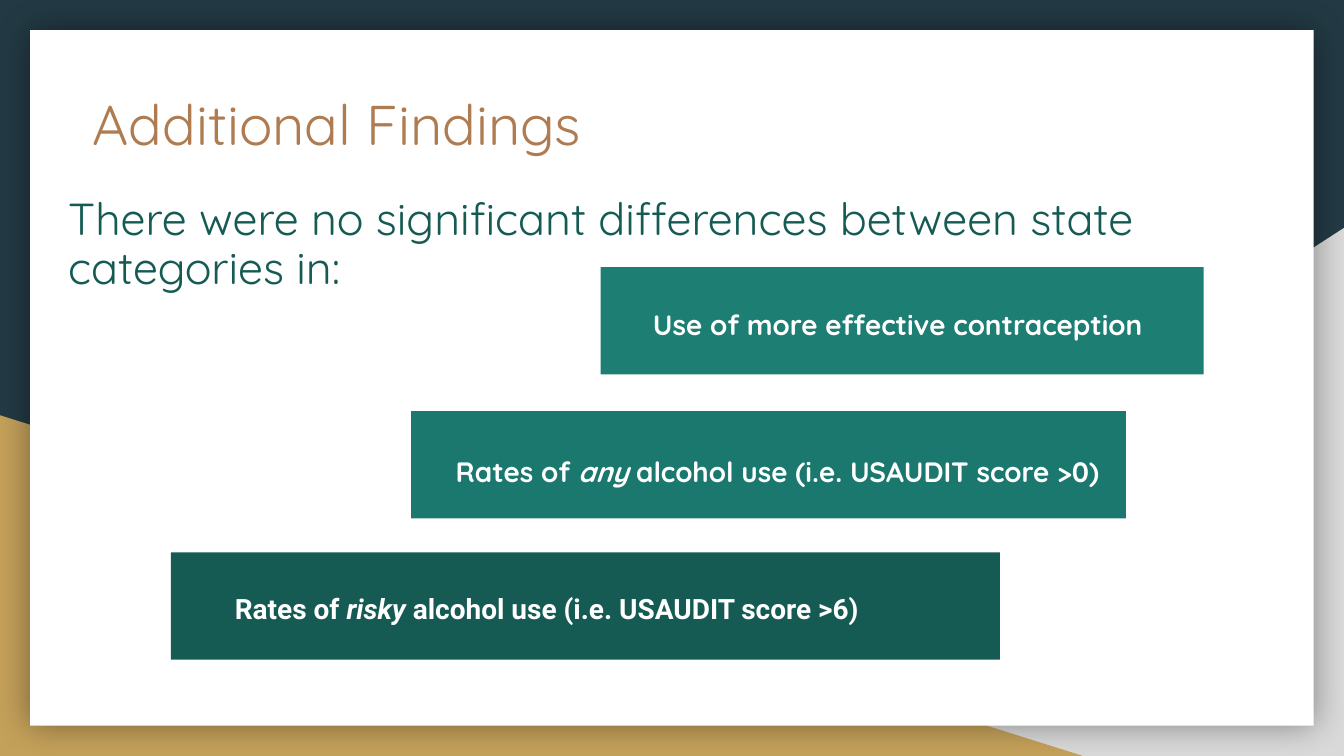
"""Build the Additional Findings slide with three stepped finding bars."""
from lxml import etree
from pptx import Presentation
from pptx.dml.color import RGBColor
from pptx.enum.shapes import MSO_SHAPE
from pptx.enum.text import MSO_ANCHOR
from pptx.oxml import parse_xml
from pptx.util import Cm, Pt

RECTANGLE, TRIANGLE = MSO_SHAPE.RECTANGLE, MSO_SHAPE.RIGHT_TRIANGLE
TOP, MIDDLE = MSO_ANCHOR.TOP, MSO_ANCHOR.MIDDLE
DRAWING = "http://schemas.openxmlformats.org/drawingml/2006/main"
WIDTH, HEIGHT = 25.4, 14.29
BAR_HEIGHT = 2.03

COLORS = {
    "night": "233A44", "gray": "D9D9D9", "gold": "C4A15A", "white": "FFFFFF",
    "copper": "AF7B51", "deep": "155B54", "teal": "1B786E", "light": "1D7E74",
}
TITLE = "Additional Findings"
INTRO = "There were no significant differences between state categories in:"
FINDINGS = [
    {"bar": (3.23, 10.44, 15.67), "fill": "deep", "font": "Roboto",
     "label": (4.19, 11, 13.08, 0.91),
     "words": [("Rates of ", False), ("risky", True),
               (" alcohol use (i.e. USAUDIT score >6)", False)]},
    {"bar": (7.77, 7.77, 13.51), "fill": "teal", "font": "Quicksand",
     "label": (8.36, 8.41, 12.73, 0.91),
     "words": [("Rates of ", False), ("any", True),
               (" alcohol use (i.e. USAUDIT score >0)", False)]},
    {"bar": (11.35, 5.05, 11.4), "fill": "light", "font": "Quicksand",
     "label": (12.09, 5.28, 12.7, 1.6),
     "words": [("Use of more effective contraception", False)]},
]


def rgb(name):
    return RGBColor.from_string(COLORS[name])


def add_block(page, kind, place, fill):
    block = page.shapes.add_shape(kind, *map(Cm, place))
    block.fill.solid()
    block.fill.fore_color.rgb = rgb(fill)
    block.line.fill.background()
    block.shadow.inherit = False
    return block


def add_text(page, place, words, font, size, color, bold=False,
             spacing=1.0, anchor=MIDDLE, inset=0.13):
    box = page.shapes.add_textbox(*map(Cm, place))
    frame = box.text_frame
    frame.word_wrap = True
    frame.vertical_anchor = anchor
    frame.margin_left = frame.margin_right = Cm(0.25)
    frame.margin_top = frame.margin_bottom = Cm(inset)
    para = frame.paragraphs[0]
    para.line_spacing = spacing
    for text, italic in words:
        span = para.add_run()
        span.text = text
        span.font.name = font
        span.font.size = Pt(size)
        span.font.bold = bold
        span.font.italic = italic
        span.font.color.rgb = rgb(color)


def add_glow(block):
    effects = block.element.spPr.find(f"{{{DRAWING}}}effectLst")
    shadow = parse_xml(
        f'<a:outerShdw xmlns:a="{DRAWING}" blurRad="{Pt(18)}" dist="0" dir="0" '
        'algn="ctr" rotWithShape="0"><a:srgbClr val="000000"/></a:outerShdw>')
    etree.SubElement(shadow[0], f"{{{DRAWING}}}alpha", val="40000")
    effects.append(shadow)


def main():
    deck = Presentation()
    deck.slide_width, deck.slide_height = Cm(WIDTH), Cm(HEIGHT)
    page = deck.slides.add_slide(deck.slide_layouts[6])
    page.background.fill.solid()
    page.background.fill.fore_color.rgb = rgb("night")

    left, top = 9.96, 4.31
    corner = add_block(page, TRIANGLE, (left, top, WIDTH - left, HEIGHT - top), "gray")
    corner.element.spPr.xfrm.set("flipH", "1")
    top = 7.85
    add_block(page, TRIANGLE, (0, top, 20.47, HEIGHT - top), "gold")
    margin = 0.57
    panel = (margin, margin, WIDTH - 2 * margin, HEIGHT - 2 * margin)
    add_glow(add_block(page, RECTANGLE, panel, "white"))

    add_text(page, (1.04, 1.45, 23.95, 6.38), [(INTRO, False)],
             "Quicksand", 24, "deep", spacing=0.9)
    for finding in FINDINGS:
        add_block(page, RECTANGLE, (*finding["bar"], BAR_HEIGHT), finding["fill"])
        add_text(page, finding["label"], finding["words"], finding["font"],
                 15, "white", bold=True, spacing=1.15)
    add_text(page, (1.5, 1.45, 20.85, 1.75), [(TITLE, False)],
             "Quicksand", 30, "copper", anchor=TOP, inset=0.25)
    deck.save("out.pptx")


if __name__ == "__main__":
    main()
